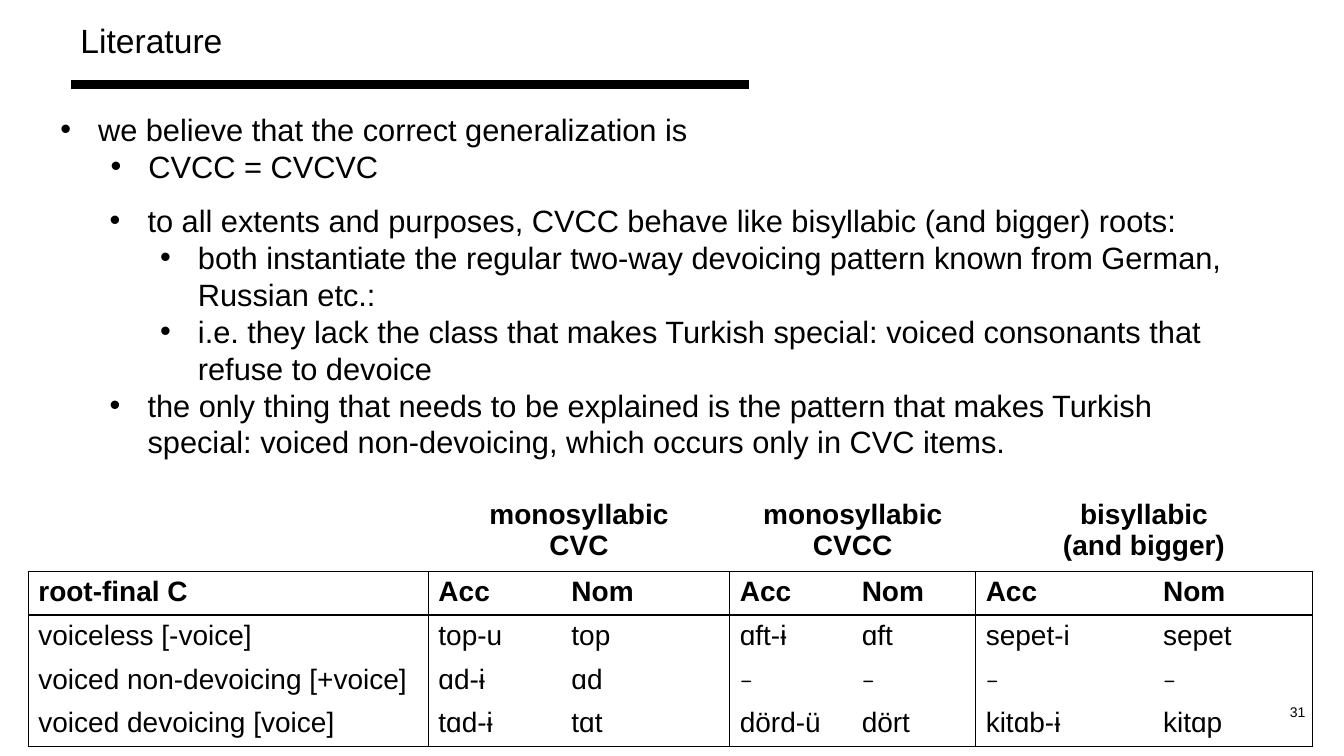
import pptx
import pptx.util
import pptx.dml.color
import pptx.enum.shapes
import pptx.enum.text
import pptx.oxml.ns
import lxml.etree

Pt = pptx.util.Pt
ALIGN = pptx.enum.text.PP_ALIGN
theme = {
    "ink": pptx.dml.color.RGBColor(0, 0, 0),
    "font": "Arial",
    "dash_font": "Quicksand",
    "title": 24,
    "body": 22,
    "table": 20,
    "dash": 18,
    "number": 10,
}


def add_child(parent, tag, **attributes):
    child = lxml.etree.SubElement(parent, pptx.oxml.ns.qn(tag))
    for name, value in attributes.items():
        child.set(name, str(value))
    return child


def write(para, text, size, font=theme["font"], bold=False):
    para.text = text
    para.font.size = Pt(size)
    para.font.name = font
    para.font.bold = bold
    para.font.color.rgb = theme["ink"]


deck = pptx.Presentation()
deck.slide_width, deck.slide_height = Pt(960), Pt(540)
page = deck.slides.add_slide(deck.slide_layouts[6])

rule = page.shapes.add_connector(
    pptx.enum.shapes.MSO_CONNECTOR.STRAIGHT, Pt(50.4), Pt(60.5), Pt(535), Pt(60.5))
rule.line.color.rgb = theme["ink"]
rule.line.width = Pt(6)
add_child(rule._element.spPr, "a:effectLst")

title = page.shapes.add_textbox(Pt(50.4), Pt(8), Pt(641), Pt(36)).text_frame
title.word_wrap = True
title.margin_top = Pt(6)
write(title.paragraphs[0], "Literature", theme["title"])

bullet_boxes = [
    (36, 75.6, 808.6, 60.5, [
        (0, "we believe that the correct generalization is"),
        (1, "CVCC = CVCVC"),
    ]),
    (35.3, 140.4, 853.2, 193.7, [
        (1, "to all extents and purposes, CVCC behave like bisyllabic (and bigger) roots:"),
        (2, "both instantiate the regular two-way devoicing pattern known from German, Russian etc.:"),
        (2, "i.e. they lack the class that makes Turkish special: voiced consonants that refuse to devoice"),
        (1, "the only thing that needs to be explained is the pattern that makes Turkish special: "
            "voiced non-devoicing, which occurs only in CVC items."),
    ]),
]
for left, top, width, height, points in bullet_boxes:
    frame = page.shapes.add_textbox(Pt(left), Pt(top), Pt(width), Pt(height)).text_frame
    frame.word_wrap = True
    for index, (level, text) in enumerate(points):
        para = frame.add_paragraph() if index else frame.paragraphs[0]
        write(para, text, theme["body"])
        para.level = level
        properties = para._p.get_or_add_pPr()
        properties.set("marL", str(Pt(27 + 36 * level)))
        properties.set("indent", str(Pt(-27)))
        bullet_font = pptx.oxml.ns.qn("a:buFont")
        defaults = properties.find(pptx.oxml.ns.qn("a:defRPr"))
        for tag, name, value in (("a:buFont", "typeface", theme["font"]), ("a:buChar", "char", "•")):
            defaults.addprevious(add_child(properties, tag, **{name: value}))

column_widths = [285.8, 95, 120.3, 87.1, 88.6, 126.7, 113.8]
row_heights = [55.2] + [31.2] * 4
rows = [
    ["", "monosyllabic\nCVC", "", "monosyllabic\nCVCC", "", "bisyllabic\n(and bigger)", ""],
    ["root-final C"] + ["Acc", "Nom"] * 3,
    ["voiceless [-voice]", "top-u", "top", "ɑft-ɨ", "ɑft", "sepet-i", "sepet"],
    ["voiced non-devoicing [+voice]", "ɑd-ɨ", "ɑd"] + ["–"] * 4,
    ["voiced devoicing [voice]", "tɑd-ɨ", "tɑt", "dörd-ü", "dört", "kitɑb-ɨ", "kitɑp"],
]
frame = page.shapes.add_table(
    len(rows), len(column_widths), Pt(20.2), Pt(352.8), Pt(sum(column_widths)), Pt(sum(row_heights)))
table = frame.table
table.first_row = table.horz_banding = False
for column, width in zip(table.columns, column_widths):
    column.width = Pt(width)
for row, height in zip(table.rows, row_heights):
    row.height = Pt(height)
for first in (1, 3, 5):
    table.cell(0, first).merge(table.cell(0, first + 1))

for r, texts in enumerate(rows):
    for c, text in enumerate(texts):
        cell = table.cell(r, c)
        properties = cell._tc.get_or_add_tcPr()
        edges = {
            "a:lnL": r > 0 and c in (0, 1, 3, 5),
            "a:lnR": r > 0 and c in (0, 2, 4, 6),
            "a:lnT": r in (1, 2),
            "a:lnB": r in (0, 1, 4),
        }
        for tag, visible in edges.items():
            edge = add_child(properties, tag, w=Pt(1))
            if visible:
                add_child(add_child(edge, "a:solidFill"), "a:srgbClr", val=theme["ink"])
            else:
                add_child(edge, "a:noFill")
        cell.fill.background()
        for index, line in enumerate(text.split("\n")):
            para = cell.text_frame.add_paragraph() if index else cell.text_frame.paragraphs[0]
            if line == "–":
                write(para, line, theme["dash"], theme["dash_font"])
            else:
                write(para, line, theme["table"], bold=r < 2)
            para.alignment = ALIGN.LEFT if r else ALIGN.CENTER

number = page.shapes.add_textbox(Pt(824.4), Pt(496.8), Pt(115.2), Pt(21.6)).text_frame
number.word_wrap = True
number.vertical_anchor = pptx.enum.text.MSO_ANCHOR.BOTTOM
write(number.paragraphs[0], "31", theme["number"])
number.paragraphs[0].alignment = ALIGN.RIGHT

deck.save("out.pptx")
